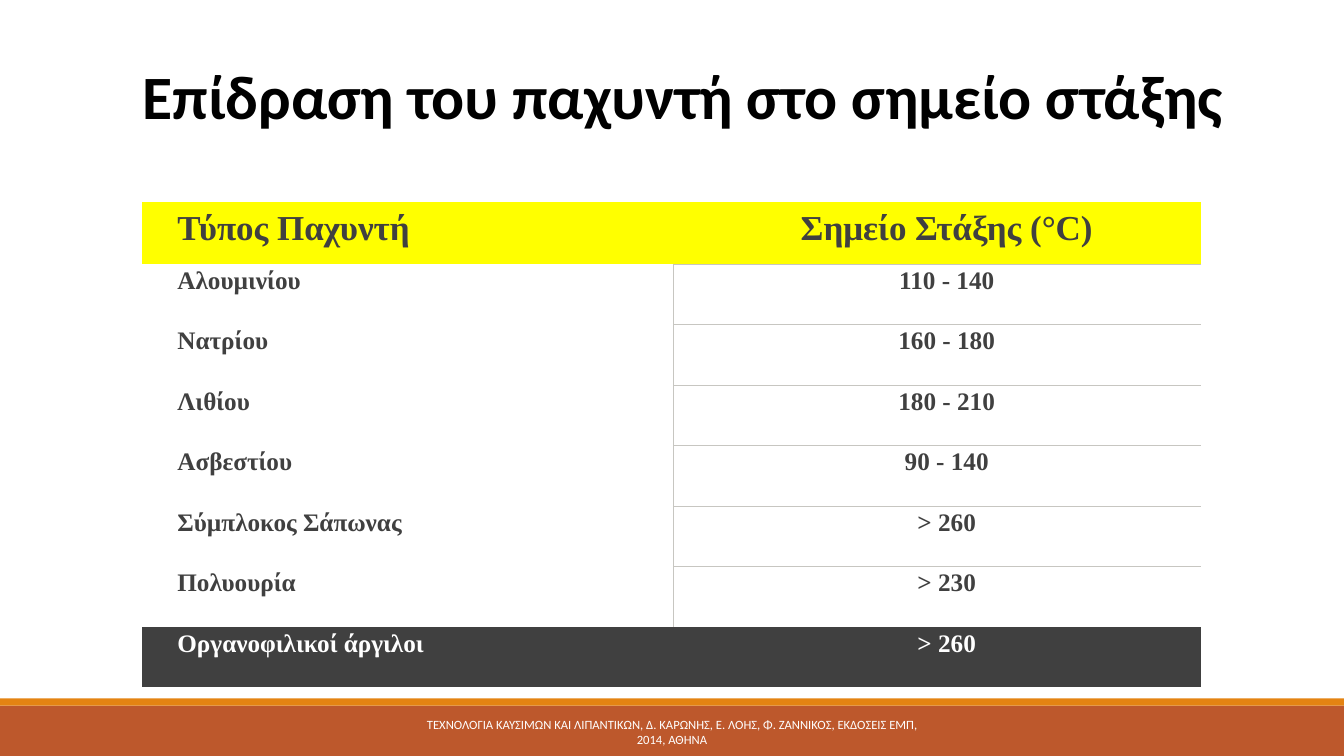
from lxml import etree
from pptx import Presentation
from pptx.dml.color import RGBColor
from pptx.enum.shapes import MSO_SHAPE
from pptx.enum.text import MSO_ANCHOR, MSO_AUTO_SIZE, PP_ALIGN
from pptx.oxml.ns import qn
from pptx.util import Inches, Pt

RECT = MSO_SHAPE.RECTANGLE
MIDDLE, TOP = MSO_ANCHOR.MIDDLE, MSO_ANCHOR.TOP
LEFT, CENTER = PP_ALIGN.LEFT, PP_ALIGN.CENTER
NO_AUTOFIT = MSO_AUTO_SIZE.NONE

COLORS = {
    "black": "000000", "white": "FFFFFF", "yellow": "FFFF00",
    "dark": "404040", "rule": "C7C6C1", "rust": "BD582C", "orange": "E48312",
}
TITLE = "Επίδραση του παχυντή στο σηµείο στάξης"
FOOTER = ("ΤΕΧΝΟΛΟΓΙΑ ΚΑΥΣΙΜΩΝ ΚΑΙ ΛΙΠΑΝΤΙΚΩΝ, Δ. ΚΑΡΩΝΗΣ, Ε. ΛΟΗΣ, "
          "Φ. ΖΑΝΝΙΚΟΣ, ΕΚΔΟΣΕΙΣ ΕΜΠ, 2014, ΑΘΗΝΑ")
ROWS = [
    ("Τύπος Παχυντή", "Σημείο Στάξης (°C)"),
    ("Αλουµινίου", "110 - 140"),
    ("Νατρίου", "160 - 180"),
    ("Λιθίου", "180 - 210"),
    ("Ασβεστίου", "90 - 140"),
    ("Σύµπλοκος Σάπωνας", "> 260"),
    ("Πολυουρία", "> 230"),
    ("Οργανοφιλικοί άργιλοι", "> 260"),
]
BARS = [(7, 0.5, "rust"), (6.93, 0.07, "orange")]
COLUMNS = [(5.27, LEFT, 0.07), (5.23, CENTER, 0.12)]
HEADER_H, ROW_H = 0.62, 0.6
LINE_SPACING = 11.7
STYLES = {
    "header": {"size": 25, "color": "dark", "fill": "yellow", "top": 0.3},
    "body": {"size": 18, "color": "dark", "fill": None, "top": 0.14},
    "last": {"size": 18, "color": "white", "fill": "dark", "top": 0.14},
}
BORDERS = {
    "header": ("B", "B"),
    "body": ("R", "LT"),
    "last": ("", ""),
}


def rgb(name):
    return RGBColor.from_string(COLORS[name])


def add_run(p, text, size, color, font="Calibri", bold=False):
    r = p.add_run()
    r.text = text
    r.font.name, r.font.size, r.font.bold = font, Pt(size), bold
    r.font.color.rgb = rgb(color)


def set_borders(cell, sides):
    tc_pr = cell._tc.get_or_add_tcPr()
    for side in "LRTB":
        ln = etree.SubElement(tc_pr, qn(f"a:ln{side}"), w=str(Pt(0.75)))
        if side in sides:
            fill = etree.SubElement(ln, qn("a:solidFill"))
            etree.SubElement(fill, qn("a:srgbClr"), val=COLORS["rule"])
        else:
            etree.SubElement(ln, qn("a:noFill"))


def fill_cell(cell, text, kind, column):
    style = STYLES[kind]
    _, align, indent = COLUMNS[column]
    set_borders(cell, BORDERS[kind][column])
    if style["fill"]:
        cell.fill.solid()
        cell.fill.fore_color.rgb = rgb(style["fill"])
    else:
        cell.fill.background()
    cell.margin_left, cell.margin_right = Inches(0.28), Inches(0.21)
    cell.margin_top, cell.margin_bottom = Inches(style["top"]), Inches(0.14)
    cell.vertical_anchor = TOP
    p = cell.text_frame.paragraphs[0]
    p.alignment = align
    p.line_spacing = Pt(LINE_SPACING)
    p._p.get_or_add_pPr().set("marL", str(Inches(indent)))
    add_run(p, text, style["size"], style["color"], "Times New Roman", True)


prs = Presentation()
prs.slide_width, prs.slide_height = Inches(13.33), Inches(7.5)
s = prs.slides.add_slide(prs.slide_layouts[5])

for top, height, color in BARS:
    bar = s.shapes.add_shape(RECT, 0, Inches(top), prs.slide_width, Inches(height))
    bar.shadow.inherit = False
    bar.fill.solid()
    bar.fill.fore_color.rgb = rgb(color)
    bar.line.fill.background()

title = s.shapes.title
title.left, title.top = Inches(0.23), Inches(0.26)
title.width, title.height = Inches(13.1), Inches(1.45)
tf = title.text_frame
tf.auto_size, tf.vertical_anchor, tf.word_wrap = NO_AUTOFIT, MIDDLE, True
p = tf.paragraphs[0]
p.alignment, p.line_spacing, p.space_after = CENTER, 0.9, Pt(6)
add_run(p, TITLE, 44, "black", bold=True)

table_w = sum(width for width, _, _ in COLUMNS)
table_h = HEADER_H + ROW_H * (len(ROWS) - 1)
table = s.shapes.add_table(len(ROWS), len(COLUMNS), Inches(1.41), Inches(2),
                           Inches(table_w), Inches(table_h)).table
table.horz_banding = False
for c, (width, _, _) in enumerate(COLUMNS):
    table.columns[c].width = Inches(width)
for i, row in enumerate(ROWS):
    kind = "header" if i == 0 else "last" if i == len(ROWS) - 1 else "body"
    table.rows[i].height = Inches(HEADER_H if i == 0 else ROW_H)
    for c, text in enumerate(row):
        fill_cell(table.cell(i, c), text, kind, c)

footer = s.shapes.add_textbox(Inches(4.03), Inches(7.06), Inches(5.27), Inches(0.4))
tf = footer.text_frame
tf.word_wrap, tf.vertical_anchor = True, MIDDLE
p = tf.paragraphs[0]
p.alignment = CENTER
add_run(p, FOOTER, 9, "white")

prs.save("out.pptx")
